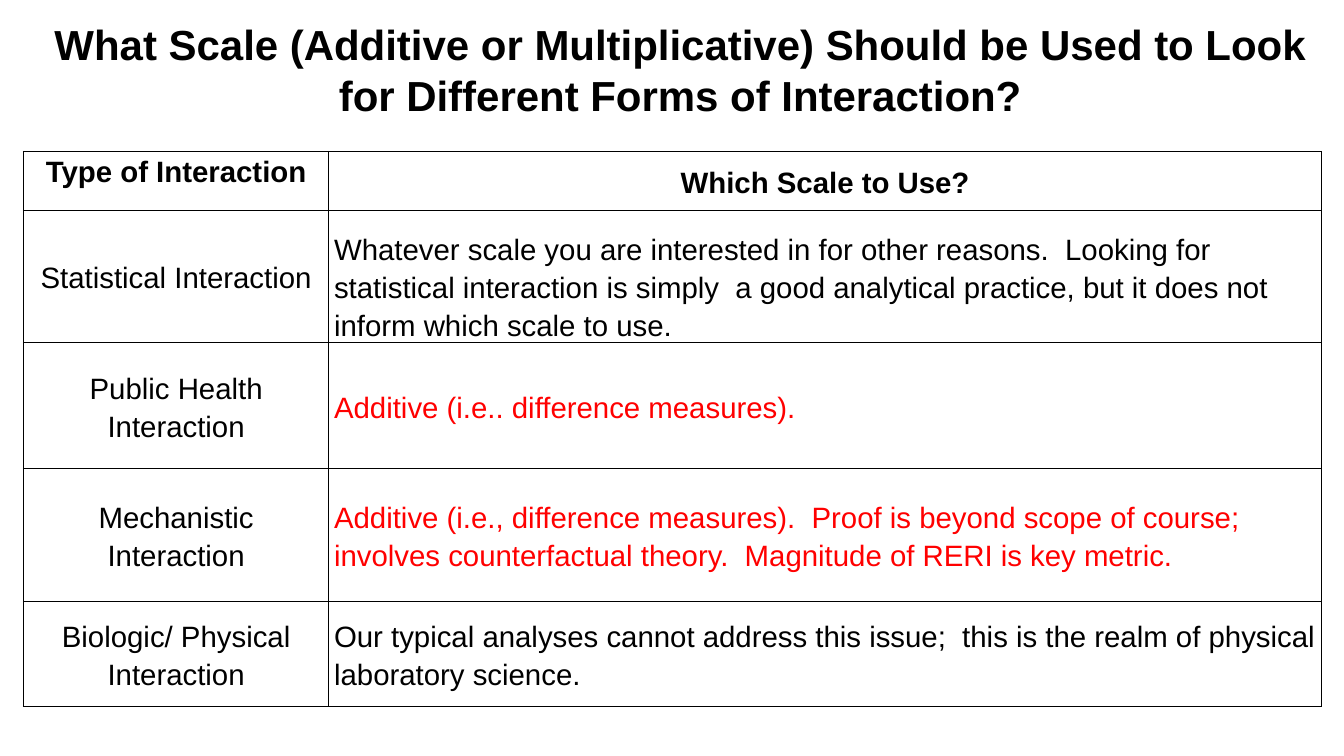
import dataclasses

import pptx
import pptx.dml.color
import pptx.enum.text
import pptx.oxml
import pptx.oxml.ns
import pptx.util

Inches = pptx.util.Inches
Align = pptx.enum.text.PP_ALIGN
Anchor = pptx.enum.text.MSO_ANCHOR


@dataclasses.dataclass(frozen=True)
class Theme:
    font: str = "Arial"
    black: str = "000000"
    red: str = "FF0000"
    title: int = 40
    body: int = 28
    line: int = 1


TITLE = ("What Scale (Additive or Multiplicative) Should be Used to Look "
         "for Different Forms of Interaction?")
HEADS = ("Type of Interaction", "Which Scale to Use?")
# Interaction, scale to use, whether the scale is additive (red)
ROWS = [
    ("Statistical Interaction",
     "Whatever scale you are interested in for other reasons.  Looking for "
     "statistical interaction is simply  a good analytical practice, but it "
     "does not inform which scale to use.", False),
    ("Public Health Interaction", "Additive (i.e.. difference measures).", True),
    ("Mechanistic Interaction",
     "Additive (i.e., difference measures).  Proof is beyond scope of course; "
     "involves counterfactual theory.  Magnitude of RERI is key metric.", True),
    ("Biologic/ Physical Interaction",
     "Our typical analyses cannot address this issue;  this is the realm of "
     "physical laboratory science.", False),
]
WIDTHS = (4.04, 13.13)
HEIGHTS = (0.78, 1.75, 1.67, 1.75, 1.4)


def apply(item, values):
    for name, value in values.items():
        setattr(item, name, value)


class Deck:
    def __init__(self, theme, width, height):
        self.theme = theme
        self.show = pptx.Presentation()
        apply(self.show, {"slide_width": Inches(width),
                          "slide_height": Inches(height)})
        self.slide = self.show.slides.add_slide(self.show.slide_layouts[5])

    def label(self, frame, text, size, color, bold=False, align=Align.LEFT, space=1.0):
        para = frame.paragraphs[0]
        apply(para, {"alignment": align, "line_spacing": space})
        run = para.add_run()
        run.text = text
        apply(run.font, {"name": self.theme.font, "size": pptx.util.Pt(size),
                         "bold": bold})
        run.font.color.rgb = pptx.dml.color.RGBColor.from_string(color)

    def title(self, text, left, top, width, height):
        shape = self.slide.shapes.title
        apply(shape, {"left": Inches(left), "top": Inches(top),
                      "width": Inches(width), "height": Inches(height)})
        frame = shape.text_frame
        apply(frame, {"word_wrap": True, "vertical_anchor": Anchor.BOTTOM,
                      "auto_size": pptx.enum.text.MSO_AUTO_SIZE.NONE})
        self.label(frame, text, self.theme.title, self.theme.black, True, Align.CENTER)

    def table(self, left, top, widths, heights):
        table = self.slide.shapes.add_table(
            len(heights), len(widths), Inches(left), Inches(top),
            Inches(sum(widths)), Inches(sum(heights))).table
        apply(table, {"first_row": False, "horz_banding": False})
        for col, width in zip(table.columns, widths):
            col.width = Inches(width)
        for row, height in zip(table.rows, heights):
            row.height = Inches(height)
        return table

    def border(self, cell):
        props = cell._tc.get_or_add_tcPr()
        for side in ("lnL", "lnR", "lnT", "lnB"):
            props.append(pptx.oxml.parse_xml(
                f'<a:{side} {pptx.oxml.ns.nsdecls("a")} '
                f'w="{pptx.util.Pt(self.theme.line)}"><a:solidFill>'
                f'<a:srgbClr val="{self.theme.black}"/></a:solidFill></a:{side}>'))

    def cell(self, cell, text, anchor=Anchor.MIDDLE, **style):
        self.border(cell)
        cell.fill.background()
        apply(cell, {"margin_left": Inches(0.07), "margin_right": Inches(0.07),
                     "margin_top": 0, "margin_bottom": 0,
                     "vertical_anchor": anchor})
        style = {"color": self.theme.black, **style}
        self.label(cell.text_frame, text, self.theme.body, space=1.15, **style)


def main():
    theme = Theme()
    deck = Deck(theme, 17.78, 10)
    deck.title(TITLE, 0.31, 0.25, 17.38, 1.38)
    table = deck.table(0.31, 2, WIDTHS, HEIGHTS)
    for col, (head, anchor) in enumerate(zip(HEADS, (Anchor.TOP, Anchor.MIDDLE))):
        deck.cell(table.cell(0, col), head, anchor, bold=True, align=Align.CENTER)
    for row, (kind, scale, added) in enumerate(ROWS, 1):
        deck.cell(table.cell(row, 0), kind, align=Align.CENTER)
        deck.cell(table.cell(row, 1), scale,
                  Anchor.BOTTOM if row == 1 else Anchor.MIDDLE,
                  color=theme.red if added else theme.black)
    deck.show.save("out.pptx")


if __name__ == "__main__":
    main()
